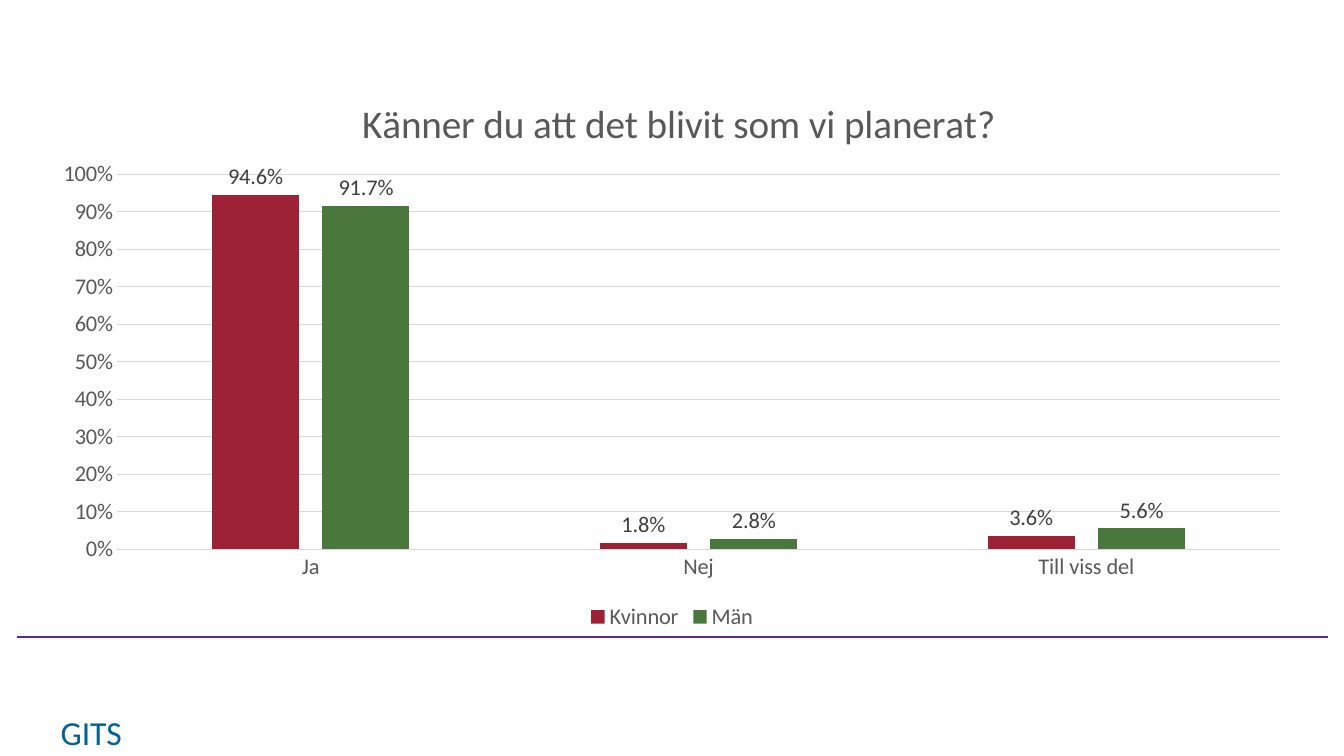
from lxml import etree
from pptx import Presentation
from pptx import util as u
from pptx.chart.data import CategoryChartData
from pptx.dml.color import RGBColor
from pptx.enum import chart as charts, shapes, text
from pptx.oxml import parse_xml
from pptx.oxml.ns import nsdecls, qn

GREY, GRID, PURPLE, BLUE = "595959", "D9D9D9", "582C83", "006298"


def color(value):
    return RGBColor.from_string(value)


class SurveyPage:
    """Holds the font and the current slide, and adds elements to it."""

    def __init__(self, page, font="Calibri"):
        self.page = page
        self.font = font

    def style(self, font, size, fill):
        for name, value in {"name": self.font, "size": u.Pt(size), "bold": False}.items():
            setattr(font, name, value)
        font.color.rgb = color(fill)

    def stroke(self, line, fill, width):
        line.color.rgb = color(fill)
        line.width = u.Pt(width)

    def label(self, words, place, size, fill):
        box = self.page.shapes.add_textbox(*map(u.Inches, place))
        frame = box.text_frame
        frame.word_wrap = False
        frame.auto_size = text.MSO_AUTO_SIZE.SHAPE_TO_FIT_TEXT
        para = frame.paragraphs[0]
        para.alignment = text.PP_ALIGN.CENTER
        span = para.add_run()
        span.text = words
        self.style(span.font, size, fill)

    def rule(self, ends, fill, width):
        line = self.page.shapes.add_connector(shapes.MSO_CONNECTOR.STRAIGHT, *map(u.Inches, ends))
        self.stroke(line.line, fill, width)
        etree.SubElement(line._element.spPr, qn("a:effectLst"))

    def layout(self, parent, index, settings):
        for old in parent.findall(qn("c:layout")):
            parent.remove(old)
        items = "".join(f'<c:{name} val="{value}"/>' for name, value in settings.items())
        parent.insert(index, parse_xml(
            f'<c:layout {nsdecls("c")}><c:manualLayout>{items}</c:manualLayout></c:layout>'))

    def columns(self, title, categories, series, place):
        data = CategoryChartData(number_format="0.0%")
        data.categories = categories
        for name, (_, values) in series.items():
            data.add_series(name, values)
        chart = self.page.shapes.add_chart(
            charts.XL_CHART_TYPE.COLUMN_CLUSTERED, *map(u.Inches, place), data).chart
        self.style(chart.font, 16, GREY)
        self.title(chart, title)
        self.axes(chart)
        self.bars(chart.plots[0], series)
        chart.has_legend = True
        chart.legend.position = charts.XL_LEGEND_POSITION.BOTTOM
        chart.legend.include_in_layout = False
        self.style(chart.legend.font, 16, GREY)
        self.layout(chart._chartSpace.chart.plotArea, 0, {
            "layoutTarget": "inner", "xMode": "edge", "yMode": "edge",
            "x": 0.062, "y": 0.197, "w": 0.918, "h": 0.654})

    def title(self, chart, words):
        chart.has_title = True
        span = chart.chart_title.text_frame.paragraphs[0].add_run()
        span.text = words
        self.style(span.font, 28, GREY)
        self.layout(chart.chart_title._element, 1, {
            "xMode": "edge", "yMode": "edge", "x": 0.25, "y": 0.05})

    def axes(self, chart):
        for axis in (chart.category_axis, chart.value_axis):
            axis.major_tick_mark = axis.minor_tick_mark = charts.XL_TICK_MARK.NONE
            self.style(axis.tick_labels.font, 16, GREY)
        self.stroke(chart.category_axis.format.line, GRID, 0.75)
        scale = chart.value_axis
        for name, value in {"minimum_scale": 0, "maximum_scale": 1, "major_unit": 0.1}.items():
            setattr(scale, name, value)
        scale.format.line.fill.background()
        self.stroke(scale.major_gridlines.format.line, GRID, 0.75)
        scale.tick_labels.number_format = "0%"
        scale.tick_labels.number_format_is_linked = False

    def bars(self, plot, series):
        for name, value in {"gap_width": 219, "overlap": -27, "vary_by_categories": False}.items():
            setattr(plot, name, value)
        for bar, (fill, _) in zip(plot.series, series.values()):
            bar.format.fill.solid()
            bar.format.fill.fore_color.rgb = color(fill)
            labels = bar.data_labels
            settings = {"show_value": True, "number_format": "0.0%",
                        "number_format_is_linked": False,
                        "position": charts.XL_LABEL_POSITION.OUTSIDE_END}
            for name, value in settings.items():
                setattr(labels, name, value)
            self.style(labels.font, 16, "404040")


def main():
    deck = Presentation()
    deck.slide_width, deck.slide_height = u.Inches(13.33), u.Inches(7.5)
    survey = SurveyPage(deck.slides.add_slide(deck.slide_layouts[6]))
    survey.label("GITS", (0.47, 7.01, 0.87, 0.5), 24, BLUE)
    survey.rule((0.17, 6.32, 13.17, 6.32), PURPLE, 1)
    survey.columns(
        "Känner du att det blivit som vi planerat?",
        ("Ja", "Nej", "Till viss del"),
        {"Kvinnor": ("9D2235", (0.946, 0.018, 0.036)),
         "Män": ("4A773C", (0.917, 0.028, 0.056))},
        (0.38, 0.61, 12.57, 5.69))
    deck.save("out.pptx")


if __name__ == "__main__":
    main()
